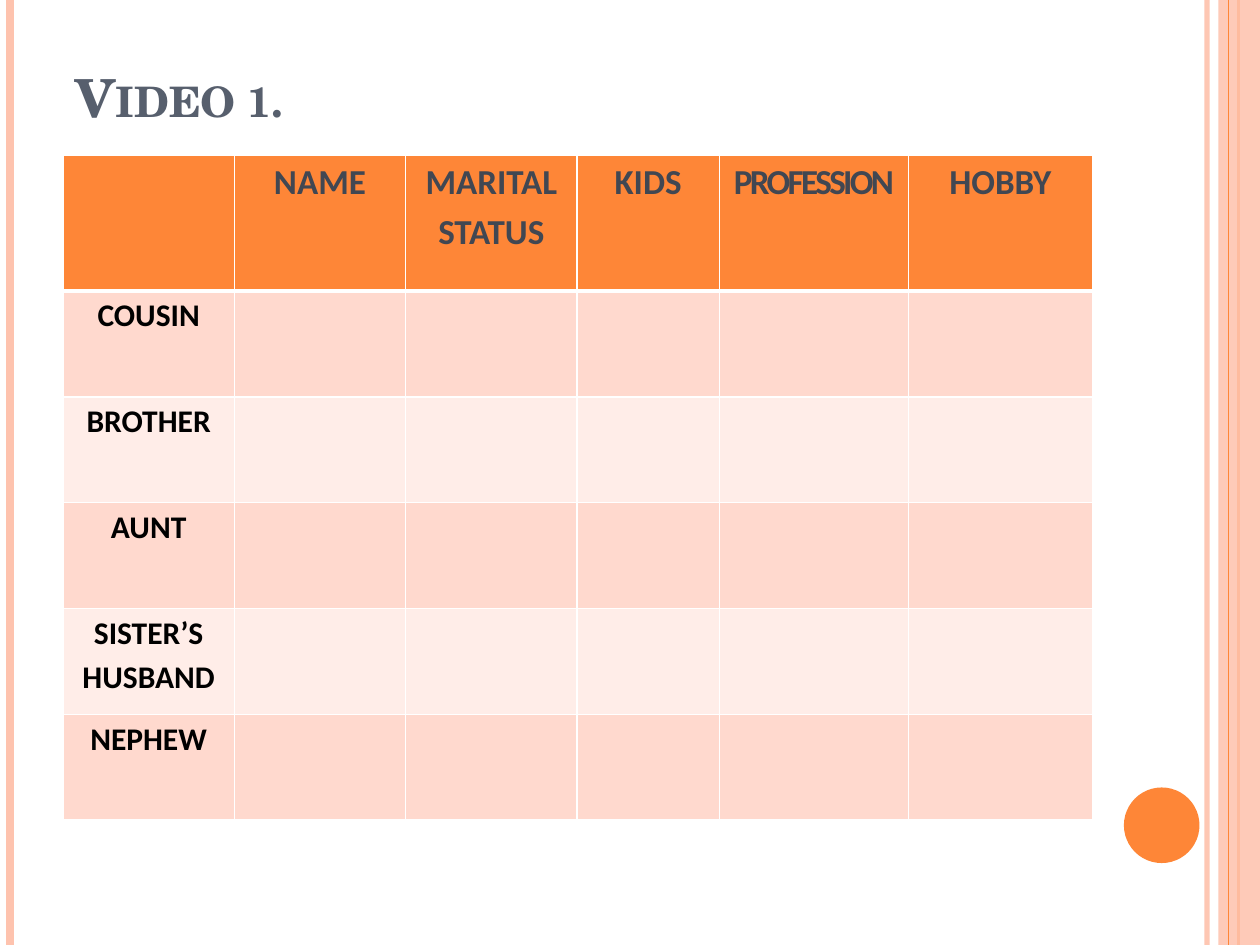
from lxml.etree import SubElement
from pptx import Presentation
from pptx.dml.color import RGBColor
from pptx.enum.shapes import MSO_CONNECTOR, MSO_SHAPE
from pptx.enum.text import MSO_ANCHOR, PP_ALIGN
from pptx.oxml.ns import qn
from pptx.util import Inches, Pt

ORANGE = RGBColor(0xFE, 0x86, 0x37)
PEACH = RGBColor(0xFE, 0xC3, 0xAE)
BAND_DARK = RGBColor(0xFF, 0xD9, 0xCE)
BAND_LIGHT = RGBColor(0xFF, 0xED, 0xE8)
WHITE = RGBColor(0xFF, 0xFF, 0xFF)
BLACK = RGBColor(0, 0, 0)
SLATE = RGBColor(0x57, 0x5F, 0x6D)
HEADER_TEXT = RGBColor(0x41, 0x47, 0x52)

HEADERS = ["", "NAME", "MARITAL STATUS", "KIDS", "PROFESSION", "HOBBY"]
RELATIVES = ["COUSIN", "BROTHER", "AUNT", "SISTER’S HUSBAND", "NEPHEW"]
COLUMN_WIDTHS = [1.36, 1.36, 1.36, 1.13, 1.5, 1.46]
HEADER_HEIGHT, ROW_HEIGHT = 1.08, 0.84
LEFT, CONTENT_WIDTH = Inches(0.5), Inches(8.17)


def set_opacity(fill_parent, percent):
    color = fill_parent.find(qn("a:solidFill"))[0]
    SubElement(color, qn("a:alpha"), val=str(percent * 1000))


def set_borders(cell, top, bottom):
    """Draw white cell borders: 1 pt at the sides, given widths above and below."""
    properties = cell._tc.get_or_add_tcPr()
    for side, width in zip("LRTB", (1, 1, top, bottom)):
        line = SubElement(properties, qn(f"a:ln{side}"), w=str(Pt(width)))
        fill = SubElement(line, qn("a:solidFill"))
        SubElement(fill, qn("a:srgbClr"), val=str(WHITE))


presentation = Presentation()
presentation.slide_width, presentation.slide_height = Inches(10), Inches(7.5)
slide = presentation.slides.add_slide(presentation.slide_layouts[5])
shapes = slide.shapes
height = presentation.slide_height

# Side stripes, from back to front; the band lies between the stripes
for x, color, width, opacity in [
    (9.58, PEACH, 3, 93),
    (0.08, PEACH, 4.5, 100),
    (9.83, ORANGE, 1.5, 100),
    (9.75, ORANGE, 0.75, 100),
]:
    if x == 9.75:
        band = shapes.add_shape(MSO_SHAPE.RECTANGLE, Inches(9.67), 0, Inches(0.33), height)
        band.shadow.inherit = False
        band.fill.solid()
        band.fill.fore_color.rgb = PEACH
        band.line.fill.background()
        set_opacity(band._element.spPr, 87)
    stripe = shapes.add_connector(MSO_CONNECTOR.STRAIGHT, Inches(x), 0, Inches(x), height)
    stripe.line.color.rgb = color
    stripe.line.width = Pt(width)
    if opacity < 100:
        set_opacity(stripe.line._ln, opacity)
    SubElement(stripe._element.spPr, qn("a:effectLst"))

circle = shapes.add_shape(
    MSO_SHAPE.OVAL, Inches(8.92), Inches(6.25), Inches(0.6), Inches(0.6)
)
circle.shadow.inherit = False
circle.fill.solid()
circle.fill.fore_color.rgb = ORANGE
circle.line.fill.background()

# Title
title = shapes.title
title.left, title.top, title.width, title.height = LEFT, Inches(0.3), CONTENT_WIDTH, Inches(0.77)
title.text_frame.text = "Video 1."
title.text_frame.vertical_anchor = MSO_ANCHOR.BOTTOM
paragraph = title.text_frame.paragraphs[0]
paragraph.alignment = PP_ALIGN.LEFT
run = paragraph.runs[0]
run.font.name = "TeX Gyre Schola"
run.font.size = Pt(30)
run.font.bold = True
run.font.color.rgb = SLATE
run.font._element.set("cap", "small")

# Table of relatives
rows = [HEADERS] + [[name] + [""] * (len(HEADERS) - 1) for name in RELATIVES]
table_height = Inches(HEADER_HEIGHT + ROW_HEIGHT * len(RELATIVES))
table = shapes.add_table(
    len(rows), len(HEADERS), LEFT, Inches(1.23), CONTENT_WIDTH, table_height
).table
for column, width in zip(table.columns, COLUMN_WIDTHS):
    column.width = Inches(width)

for row_index, texts in enumerate(rows):
    is_header = row_index == 0
    table.rows[row_index].height = Inches(HEADER_HEIGHT if is_header else ROW_HEIGHT)
    band_color = BAND_DARK if row_index % 2 else BAND_LIGHT
    for column_index, text in enumerate(texts):
        cell = table.cell(row_index, column_index)
        set_borders(cell, top=3 if row_index == 1 else 1, bottom=3 if is_header else 1)
        cell.fill.solid()
        cell.fill.fore_color.rgb = ORANGE if is_header else band_color
        if not text:
            continue
        cell.margin_left = cell.margin_right = Inches(0.07)
        cell.margin_top = cell.margin_bottom = 0
        cell.text_frame.text = text
        paragraph = cell.text_frame.paragraphs[0]
        paragraph.alignment = PP_ALIGN.CENTER
        paragraph.line_spacing = 1.15
        font = paragraph.runs[0].font
        font.name = "Calibri"
        font.size = Pt(20 if is_header else 18)
        font.bold = True
        font.color.rgb = HEADER_TEXT if is_header else BLACK
        if text == "PROFESSION":
            font._element.set("spc", "-150")

presentation.save("out.pptx")
